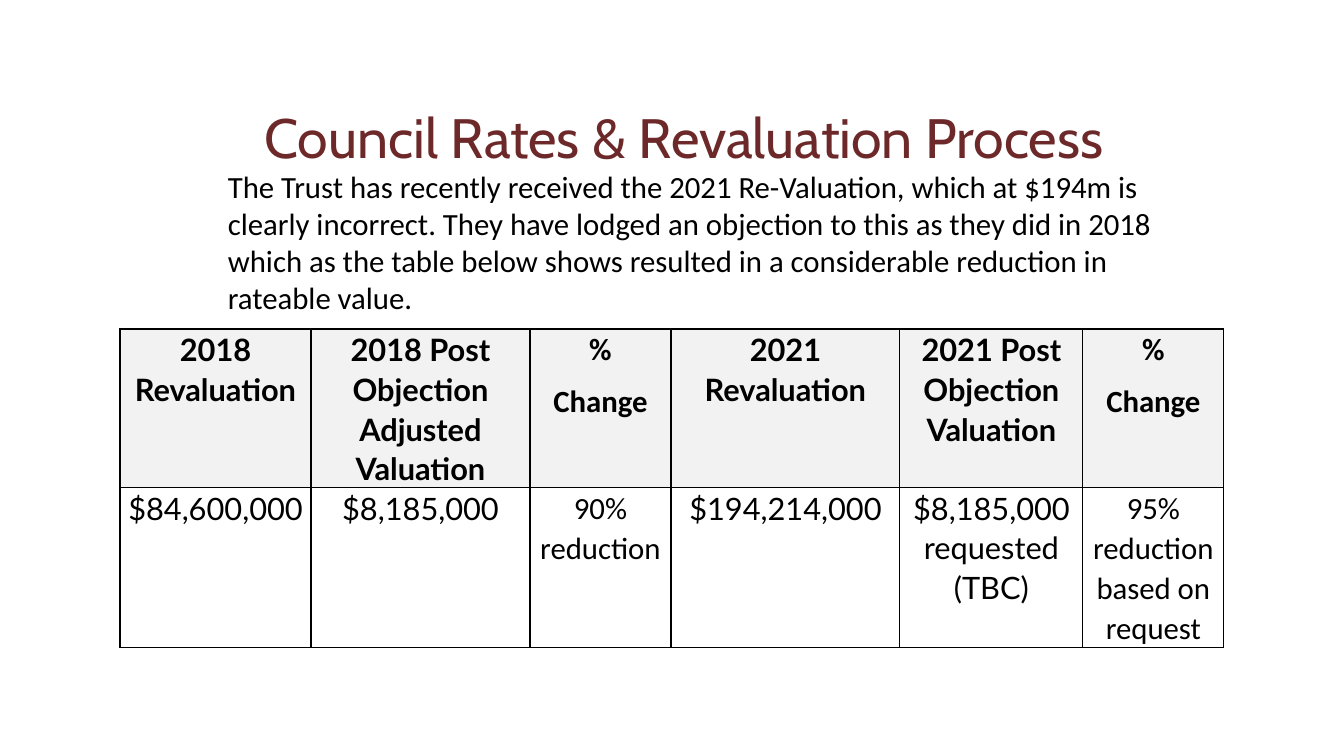
from lxml import etree
from pptx import Presentation, util as u
from pptx.dml.color import RGBColor
from pptx.enum import text
from pptx.oxml import ns

INK, MAROON, HEADER_GREY = "000000", "6D2929", "F2F2F2"
COLUMN_WIDTHS = [191, 219, 141, 229, 183, 141]
ROW_HEIGHT = 156
HEADERS = ["2018 Revaluation", "2018 Post Objection Adjusted Valuation", "%\nChange",
           "2021 Revaluation", "2021 Post Objection Valuation", "%\nChange"]
VALUES = ["$84,600,000", "$8,185,000", "90% reduction", "$194,214,000",
          "$8,185,000 requested\n(TBC)", "95% reduction\nbased on request"]
# Paragraphs followed directly by the next line, without a gap
TIGHT_PARAGRAPHS = {"$8,185,000 requested", "(TBC)", "95% reduction"}
INTRO = ("The Trust has recently received the 2021 Re-Valuation, which at $194m is "
         "clearly incorrect. They have lodged an objection to this as they did in 2018 "
         "which as the table below shows resulted in a considerable reduction in "
         "rateable value.")


def px(length):
    return u.Inches(length / 100.8)


def colour(hex_value):
    return RGBColor.from_string(hex_value)


def style(paragraph, font_name, size, hex_value, bold=False):
    for run in paragraph.runs:
        font = run.font
        font.name, font.size, font.bold = font_name, u.Pt(size), bold
        font.color.rgb = colour(hex_value)


def add_title(slide, left, top, width, height):
    title = slide.shapes.title
    title.left, title.top, title.width, title.height = map(px, (left, top, width, height))
    frame = title.text_frame
    frame.text = "Council Rates & Revaluation Process"
    frame.margin_top = frame.margin_bottom = 0
    frame.vertical_anchor = text.MSO_ANCHOR.MIDDLE
    heading = frame.paragraphs[0]
    heading.alignment = text.PP_ALIGN.CENTER
    heading.line_spacing = 0.9
    style(heading, "Cabin", 39.6, MAROON)


def add_intro(slide, left, top, width, height):
    frame = slide.shapes.add_textbox(*map(px, (left, top, width, height))).text_frame
    frame.word_wrap = True
    frame.text = INTRO
    style(frame.paragraphs[0], "Calibri", 22, INK)


def add_borders(cell):
    properties = cell._tc.get_or_add_tcPr()
    for side in ("lnL", "lnR", "lnT", "lnB"):
        line = etree.SubElement(properties, ns.qn(f"a:{side}"), w=str(u.Pt(1)))
        fill = etree.SubElement(line, ns.qn("a:solidFill"))
        etree.SubElement(fill, ns.qn("a:srgbClr"), val=INK)


def fill_cell(cell, content, font_name, is_header):
    cell.margin_left = cell.margin_right = px(7)
    cell.margin_top = cell.margin_bottom = 0
    add_borders(cell)
    if is_header:
        cell.fill.solid()
        cell.fill.fore_color.rgb = colour(HEADER_GREY)
    else:
        cell.fill.background()
    cell.text_frame.text = content
    for paragraph in cell.text_frame.paragraphs:
        paragraph.alignment = text.PP_ALIGN.CENTER
        paragraph.line_spacing = 1.07
        paragraph.space_after = u.Pt(0 if paragraph.text in TIGHT_PARAGRAPHS else 8)
        style(paragraph, font_name, 22, INK, bold=is_header)


def add_valuations(slide, left, top):
    rows = [HEADERS, VALUES]
    table = slide.shapes.add_table(
        len(rows), len(HEADERS), px(left), px(top),
        px(sum(COLUMN_WIDTHS)), px(ROW_HEIGHT * len(rows))).table
    table.first_row = table.horz_banding = False
    for column, width in zip(table.columns, COLUMN_WIDTHS):
        column.width = px(width)
    for row_index, contents in enumerate(rows):
        table.rows[row_index].height = px(ROW_HEIGHT)
        for column_index, content in enumerate(contents):
            is_change = HEADERS[column_index].startswith("%")
            fill_cell(table.cell(row_index, column_index), content,
                      "Calibri" if is_change else "Lato", is_header=row_index == 0)


def main():
    deck = Presentation()
    deck.slide_width, deck.slide_height = px(1344), px(756)
    slide = deck.slides.add_slide(deck.slide_layouts[5])
    add_title(slide, 93, 107, 1182, 68)
    add_valuations(slide, 120, 329)
    add_intro(slide, 218, 163, 973, 159)
    deck.save("out.pptx")


if __name__ == "__main__":
    main()
